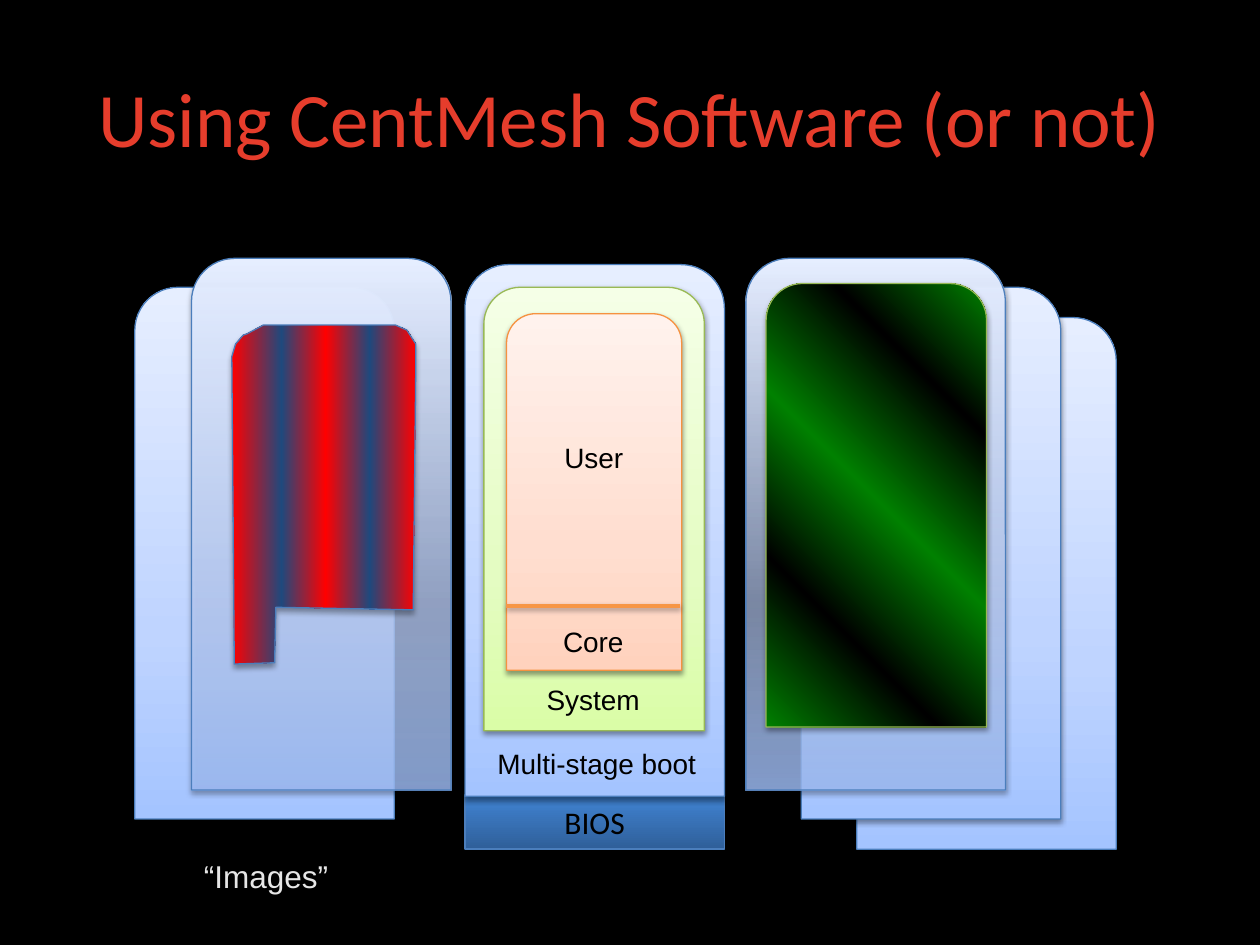
from dataclasses import dataclass

from lxml.etree import SubElement
from pptx import Presentation
from pptx.dml.color import RGBColor
from pptx.enum.shapes import MSO_CONNECTOR, MSO_SHAPE
from pptx.enum.text import MSO_ANCHOR, MSO_AUTO_SIZE, PP_ALIGN
from pptx.oxml.ns import qn
from pptx.shapes.base import BaseShape
from pptx.slide import Slide
from pptx.text.text import TextFrame
from pptx.util import Inches, Pt


@dataclass(frozen=True)
class Stop:
    position: int
    color: str
    opacity: int = 100


@dataclass(frozen=True)
class Finish:
    stops: tuple[Stop, ...]
    line: str
    angle: int = 270
    shadow_opacity: int = 38
    shadow_distance: float = 1.6


def blue_finish(low_opacity: int = 100, middle_opacity: int = 100) -> Finish:
    return Finish(
        (Stop(0, "A4C4FF", low_opacity), Stop(35, "BFD4FF", middle_opacity), Stop(100, "E6EEFF")),
        "4B7EBC",
    )


@dataclass(frozen=True)
class Theme:
    background: str = "000000"
    title: str = "E63D2C"
    dark_text: str = "000000"
    light_text: str = "E6E6E6"
    divider: str = "F79646"
    heading_font: str = "Calibri"
    label_font: str = "Arial"
    title_size: int = 44
    caption_size: int = 18
    label_size: int = 16
    outline: float = 0.75
    divider_width: float = 2
    blue: Finish = blue_finish()
    left_glass: Finish = blue_finish(78, 75)
    right_glass: Finish = blue_finish(79, 63)
    bios: Finish = Finish(
        (Stop(0, "2F5F99"), Stop(80, "3D7CC7"), Stop(100, "3A7CCB")), "4B7EBC", 270, 35, 1.8
    )
    system: Finish = Finish(
        (Stop(0, "DAFDA7"), Stop(35, "E4FCC2"), Stop(100, "F5FFE7")), "98B955"
    )
    user: Finish = Finish(
        (Stop(0, "FFD2BD"), Stop(35, "FFDED0"), Stop(100, "FFF2ED")), "F69240"
    )
    striped: Finish = Finish(
        (Stop(0, "FF0000"), Stop(27, "1F497D"), Stop(51, "FF0000"),
         Stop(75, "1F497D"), Stop(100, "FF0000")),
        "4B7EBC", 0, 35, 1.8,
    )
    diagonal: Finish = Finish(
        (Stop(0, "008000"), Stop(26, "000000"), Stop(51, "008000"),
         Stop(77, "000000"), Stop(100, "008000")),
        "98B955", 315,
    )


@dataclass(frozen=True)
class Panel:
    left: float
    top: float
    width: float
    height: float
    finish: Finish


@dataclass(frozen=True)
class Label:
    text: str
    left: float
    top: float
    width: float
    height: float
    size: int
    color: str


THEME = Theme()
IMAGE_SIZE = (2.06, 4.22)
SYSTEM_SIZE = (1.75, 3.52)
USER_SIZE = (1.39, 2.83)
BACK_PANELS = (Panel(6.8, 2.52, *IMAGE_SIZE, THEME.blue),)
STACK_PANELS = (
    Panel(3.69, 2.1, *IMAGE_SIZE, THEME.blue),
    Panel(3.84, 2.28, *SYSTEM_SIZE, THEME.system),
    Panel(4.02, 2.49, *USER_SIZE, THEME.user),
)
FRONT_PANELS = (
    Panel(6.36, 2.28, *IMAGE_SIZE, THEME.blue),
    Panel(1.07, 2.28, *IMAGE_SIZE, THEME.blue),
    Panel(1.52, 2.05, *IMAGE_SIZE, THEME.left_glass),
    Panel(5.92, 2.05, *IMAGE_SIZE, THEME.right_glass),
    Panel(6.08, 2.25, *SYSTEM_SIZE, THEME.diagonal),
)
LABELS = (
    Label("Multi-stage boot", 3.85, 5.88, 1.8, 0.37, THEME.label_size, THEME.dark_text),
    Label("System", 4.24, 5.37, 0.95, 0.37, THEME.label_size, THEME.dark_text),
    Label("Core", 4.37, 4.91, 0.69, 0.37, THEME.label_size, THEME.dark_text),
    Label("User", 4.38, 3.45, 0.68, 0.37, THEME.label_size, THEME.dark_text),
    Label("“Images”", 1.52, 6.75, 1.2, 0.4, THEME.caption_size, THEME.light_text),
)
STRIPED_OUTLINE = (
    (1.86, 5.27), (1.84, 2.83), (1.87, 2.73), (1.93, 2.66), (1.96, 2.65),
    (2.09, 2.58), (3.14, 2.58), (3.23, 2.62), (3.3, 2.73), (3.3, 2.92),
    (3.28, 4.84), (2.19, 4.82), (2.18, 5.26),
)


def write_text(frame: TextFrame, text: str, font: str, size: int, color: str) -> None:
    frame.text = text
    for span in frame.paragraphs[0].runs:
        span.font.name = font
        span.font.size = Pt(size)
        span.font.color.rgb = RGBColor.from_string(color)


def add_shadow(shape: BaseShape, opacity: int, distance: float) -> None:
    effects = SubElement(shape._element.spPr, qn("a:effectLst"))
    shadow = SubElement(
        effects, qn("a:outerShdw"), blurRad=str(Pt(3.1)), dist=str(Pt(distance)),
        dir="5400000", rotWithShape="0",
    )
    color = SubElement(shadow, qn("a:srgbClr"), val="000000")
    SubElement(color, qn("a:alpha"), val=str(opacity * 1000))


def apply_finish(shape: BaseShape, finish: Finish) -> None:
    gradient = SubElement(shape._element.spPr, qn("a:gradFill"), rotWithShape="1")
    stop_list = SubElement(gradient, qn("a:gsLst"))
    for stop in finish.stops:
        entry = SubElement(stop_list, qn("a:gs"), pos=str(stop.position * 1000))
        color = SubElement(entry, qn("a:srgbClr"), val=stop.color)
        if stop.opacity < 100:
            SubElement(color, qn("a:alpha"), val=str(stop.opacity * 1000))
    SubElement(gradient, qn("a:lin"), ang=str(finish.angle * 60000), scaled="0")
    shape.line.color.rgb = RGBColor.from_string(finish.line)
    shape.line.width = Pt(THEME.outline)
    add_shadow(shape, finish.shadow_opacity, finish.shadow_distance)


def add_panel(page: Slide, panel: Panel, kind: MSO_SHAPE = MSO_SHAPE.ROUND_2_SAME_RECTANGLE) -> BaseShape:
    box = page.shapes.add_shape(
        kind, Inches(panel.left), Inches(panel.top), Inches(panel.width), Inches(panel.height)
    )
    apply_finish(box, panel.finish)
    return box


def add_label(page: Slide, label: Label) -> None:
    box = page.shapes.add_textbox(
        Inches(label.left), Inches(label.top), Inches(label.width), Inches(label.height)
    )
    box.text_frame.word_wrap = False
    box.text_frame.auto_size = MSO_AUTO_SIZE.SHAPE_TO_FIT_TEXT
    write_text(box.text_frame, label.text, THEME.label_font, label.size, label.color)


def add_title(page: Slide) -> None:
    title = page.shapes.title
    title.left, title.top, title.width, title.height = map(Inches, (0.5, 0.3, 9, 1.25))
    title.text_frame.vertical_anchor = MSO_ANCHOR.MIDDLE
    write_text(title.text_frame, "Using CentMesh Software (or not)",
               THEME.heading_font, THEME.title_size, THEME.title)
    title.text_frame.paragraphs[0].alignment = PP_ALIGN.CENTER


def add_bios(page: Slide) -> None:
    bios = add_panel(page, Panel(3.69, 6.31, 2.06, 0.43, THEME.bios), MSO_SHAPE.RECTANGLE)
    bios.text_frame.vertical_anchor = MSO_ANCHOR.MIDDLE
    write_text(bios.text_frame, "BIOS", THEME.heading_font, THEME.caption_size, THEME.dark_text)
    bios.text_frame.paragraphs[0].alignment = PP_ALIGN.CENTER


def add_divider(page: Slide) -> None:
    divider = page.shapes.add_connector(
        MSO_CONNECTOR.STRAIGHT, Inches(4.02), Inches(4.81), Inches(5.4), Inches(4.81)
    )
    divider.line.color.rgb = RGBColor.from_string(THEME.divider)
    divider.line.width = Pt(THEME.divider_width)
    add_shadow(divider, 38, 1.6)


def add_striped_image(page: Slide) -> None:
    start, *others = [(Inches(x), Inches(y)) for x, y in STRIPED_OUTLINE]
    builder = page.shapes.build_freeform(*start)
    builder.add_line_segments(others, close=True)
    apply_finish(builder.convert_to_shape(), THEME.striped)


def main() -> None:
    deck = Presentation()
    deck.slide_width, deck.slide_height = Inches(10), Inches(7.5)
    page = deck.slides.add_slide(deck.slide_layouts[5])
    page.background.fill.solid()
    page.background.fill.fore_color.rgb = RGBColor.from_string(THEME.background)
    for panel in BACK_PANELS:
        add_panel(page, panel)
    add_title(page)
    add_bios(page)
    for panel in STACK_PANELS:
        add_panel(page, panel)
    add_divider(page)
    for panel in FRONT_PANELS:
        add_panel(page, panel)
    add_striped_image(page)
    for label in LABELS:
        add_label(page, label)
    deck.save("out.pptx")


if __name__ == "__main__":
    main()
